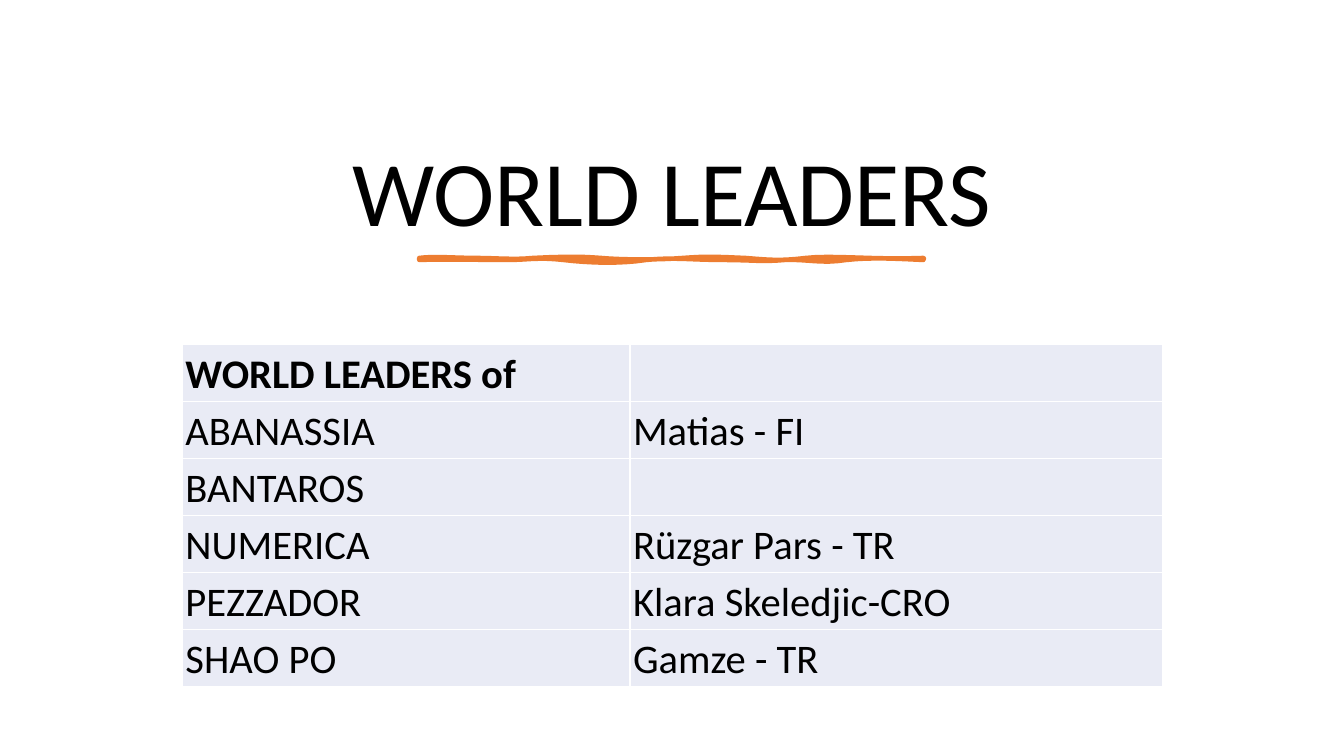
from pptx import Presentation
from pptx.dml.color import RGBColor
from pptx.enum.text import MSO_ANCHOR, MSO_AUTO_SIZE, PP_ALIGN
from pptx.oxml import parse_xml
from pptx.oxml.ns import nsdecls
from pptx.util import Pt

COLORS = {"text": "000000", "accent": "ED7D31", "cell": "E9EBF5", "border": "FFFFFF"}
FONT = "Calibri"

LEADERS = [
    ("WORLD LEADERS of", ""),
    ("ABANASSIA", "Matias - FI"),
    ("BANTAROS", ""),
    ("NUMERICA", "Rüzgar Pars - TR"),
    ("PEZZADOR", "Klara Skeledjic-CRO"),
    ("SHAO PO", "Gamze - TR"),
]

# Brush stroke outline: two control points and an end point per curve
STROKE = [
    ((9, -1.4), (27, 0), (41, 0)),
    ((55, 0), (67, 1.4), (81, 0)),
    ((96, -0.7), (114, -1.4), (130, 0)),
    ((145, 1.4), (171, 1.4), (188, 0)),
    ((206, -1.4), (215, -0.7), (233, 0)),
    ((250, 1.4), (258, 2.2), (276, 0)),
    ((295, -2.2), (325, 1.4), (360, 0)),
    ((361, 0.7), (360, 0.7), (360, 1.4)),
    ((345, 0.7), (323, -0.7), (305, 1.4)),
    ((287, 4.3), (277, 0.7), (261, 1.4)),
    ((245, 2.9), (238, 1.4), (217, 1.4)),
    ((195, 1.4), (181, -0.7), (162, 1.4)),
    ((143, 4.3), (122, 3.6), (103, 1.4)),
    ((85, -0.7), (77, 1.4), (63, 1.4)),
    ((48, 1.4), (16, 0.7), (0, 1.4)),
]


def rgb(name):
    return RGBColor.from_string(COLORS[name])


def style_runs(p, size, bold=False):
    for r in p.runs:
        r.font.name = FONT
        r.font.size = Pt(size)
        r.font.bold = bold
        r.font.color.rgb = rgb("text")


def add_title(slide, text, left, top, width, height):
    sp = slide.shapes.title
    sp.left, sp.top, sp.width, sp.height = Pt(left), Pt(top), Pt(width), Pt(height)
    tf = sp.text_frame
    tf.text = text
    tf.word_wrap = True
    tf.auto_size = MSO_AUTO_SIZE.NONE
    tf.vertical_anchor = MSO_ANCHOR.BOTTOM
    p = tf.paragraphs[0]
    p.alignment = PP_ALIGN.CENTER
    p.line_spacing = 0.9
    style_runs(p, 66)


def curve_points(start, curves, steps=8):
    """Sample a chain of cubic Bézier curves."""
    for c1, c2, end in curves:
        for i in range(1, steps + 1):
            t = i / steps
            weights = ((1 - t) ** 3, 3 * t * (1 - t) ** 2, 3 * t * t * (1 - t), t ** 3)
            yield tuple(sum(w * pt[axis] for w, pt in zip(weights, (start, c1, c2, end)))
                        for axis in (0, 1))
        start = end


def add_stroke(slide, left, top):
    builder = slide.shapes.build_freeform(Pt(left), Pt(top))
    builder.add_line_segments(
        [(Pt(left + x), Pt(top + y)) for x, y in curve_points((0, 0), STROKE)], close=True)
    sp = builder.convert_to_shape()
    sp.shadow.inherit = False
    sp.fill.solid()
    sp.fill.fore_color.rgb = rgb("accent")
    sp.line.color.rgb = rgb("accent")
    sp.line.width = Pt(3.25)


def style_cell(cell, text, bold):
    cell.text_frame.text = text
    style_runs(cell.text_frame.paragraphs[0], 29, bold)
    cell.vertical_anchor = MSO_ANCHOR.BOTTOM
    cell.margin_left = cell.margin_right = Pt(2.2)
    cell.margin_top = cell.margin_bottom = Pt(1.4)
    # Borders come before the fill in the cell properties
    tc_pr = cell._tc.get_or_add_tcPr()
    for side in ("lnL", "lnR", "lnT", "lnB"):
        tc_pr.append(parse_xml(
            f'<a:{side} {nsdecls("a")} w="{Pt(1)}"><a:solidFill>'
            f'<a:srgbClr val="{COLORS["border"]}"/></a:solidFill></a:{side}>'))
    cell.fill.solid()
    cell.fill.fore_color.rgb = rgb("cell")


def add_leaders_table(slide, left, top, widths, row_height):
    n = len(LEADERS)
    table = slide.shapes.add_table(n, len(widths), Pt(left), Pt(top),
                                   Pt(sum(widths)), Pt(n * row_height)).table
    table.first_row = table.horz_banding = False
    for col, width in zip(table.columns, widths):
        col.width = Pt(width)
    for i, row in enumerate(LEADERS):
        table.rows[i].height = Pt(row_height)
        for j, text in enumerate(row):
            style_cell(table.cell(i, j), text, bold=i == 0)


def main():
    prs = Presentation()
    prs.slide_width, prs.slide_height = Pt(960), Pt(540)
    slide = prs.slides.add_slide(prs.slide_layouts[5])
    add_title(slide, "WORLD LEADERS", 50.4, 36, 859, 144)
    add_stroke(slide, 299.5, 184.3)
    add_leaders_table(slide, 130.3, 246.2, (319.7, 380.2), 40.7)
    prs.save("out.pptx")


if __name__ == "__main__":
    main()
